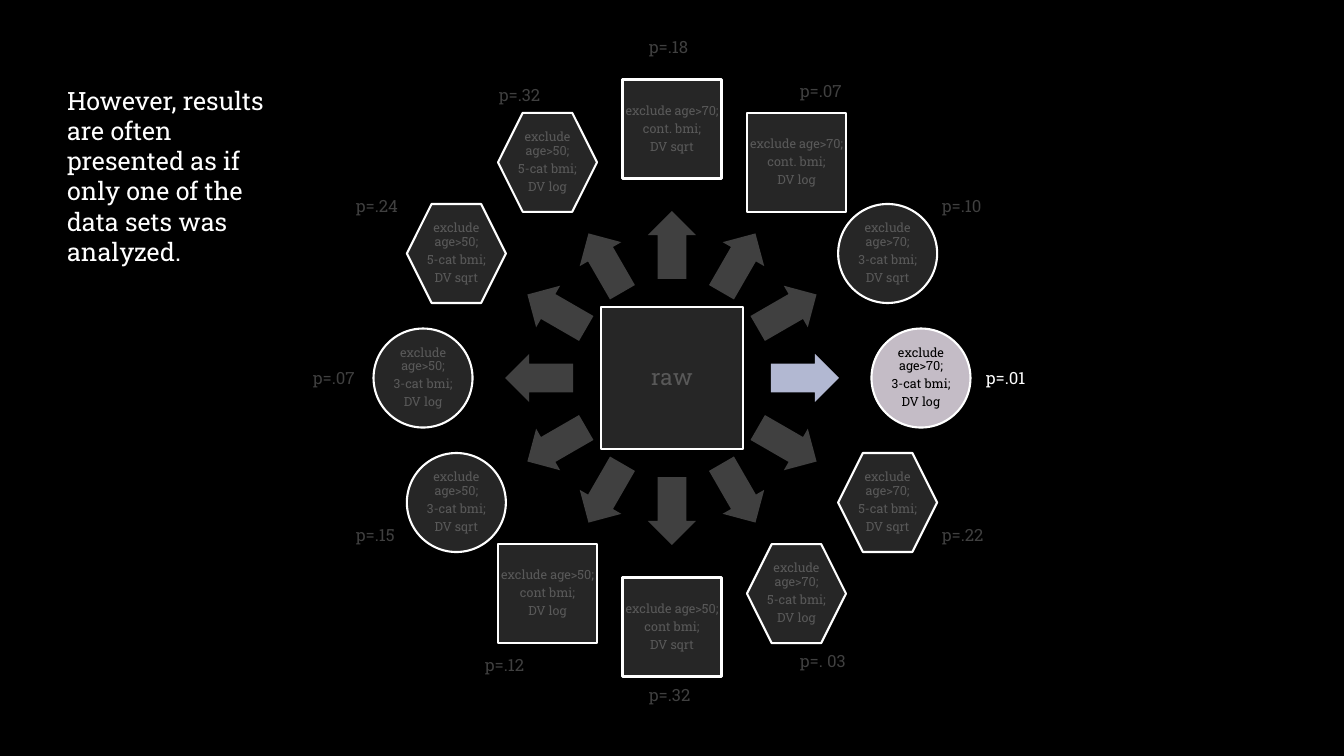
from itertools import product
from math import cos, radians, sin

from pptx import Presentation
from pptx.dml.color import RGBColor
from pptx.enum.shapes import MSO_SHAPE
from pptx.enum.text import MSO_ANCHOR, MSO_AUTO_SIZE, PP_ALIGN
from pptx.util import Emu, Pt

MESSAGE = "However, results are often presented as if only one of the data sets was analyzed."
AGES = [("exclude age>70;", "cont. bmi;"), ("exclude age>50;", "cont bmi;")]
BMI_SHAPES = [MSO_SHAPE.RECTANGLE, MSO_SHAPE.OVAL, MSO_SHAPE.HEXAGON]
BMI_CATEGORIES = [None, "3-cat bmi;", "5-cat bmi;"]
OUTCOMES = ["DV sqrt", "DV log"]
P_VALUES = [
    ("p=.18", 639, 32), ("p=.07", 790, 76), ("p=.10", 932, 191),
    ("p=.01", 976, 363), ("p=.22", 932, 520), ("p=. 03", 790, 646),
    ("p=.32", 639, 680), ("p=.12", 475, 650), ("p=.15", 346, 520),
    ("p=.07", 303, 363), ("p=.24", 346, 191), ("p=.32", 489, 80),
]
REPORTED = 3

COLORS = {
    "background": "000000", "white": "FFFFFF", "node": "262626",
    "node_text": "595959", "muted": "404040", "reported_arrow": "B2B8D2",
    "reported_node": "C4BCC6", "reported_text": "000000",
}
FONT = "Roboto Slab"
SCALE = 914400 / 100.8
CENTER_X, CENTER_Y = 672, 378
HUB_SIZE, NODE_SIZE = 142, 99
NODE_RADIUS, ARROW_RADIUS = 249, 133
ARROW_W, ARROW_H = 68, 48


def px(value):
    return Emu(round(value * SCALE))


def rgb(name):
    return RGBColor.from_string(COLORS[name])


def format_text(tf, size, color, align):
    for p in tf.paragraphs:
        p.alignment = align
        for r in p.runs:
            r.font.name = FONT
            r.font.size = Pt(size)
            r.font.color.rgb = rgb(color)


def add_filled(slide, kind, x, y, w, h, fill):
    s = slide.shapes.add_shape(kind, px(x - w / 2), px(y - h / 2), px(w), px(h))
    s.shadow.inherit = False
    s.fill.solid()
    s.fill.fore_color.rgb = rgb(fill)
    s.line.fill.background()
    return s


def add_node(slide, kind, x, y, size, fill, text, text_size, color):
    s = add_filled(slide, kind, x, y, size, size, fill)
    s.line.color.rgb = rgb("white")
    s.line.width = Pt(1.5)
    tf = s.text_frame
    tf.text = text
    tf.word_wrap = True
    tf.vertical_anchor = MSO_ANCHOR.MIDDLE
    tf.margin_left = tf.margin_right = tf.margin_top = tf.margin_bottom = px(1)
    format_text(tf, text_size, color, PP_ALIGN.CENTER)
    for p in tf.paragraphs:
        p.line_spacing = 0.9
        p.space_after = Pt(text_size * 0.35)


def add_arrow(slide, angle, fill):
    x = CENTER_X + ARROW_RADIUS * cos(radians(angle))
    y = CENTER_Y + ARROW_RADIUS * sin(radians(angle))
    s = add_filled(slide, MSO_SHAPE.RIGHT_ARROW, x, y, ARROW_W, ARROW_H, fill)
    s.adjustments[0] = 0.6
    s.adjustments[1] = 0.5
    s.rotation = angle


def add_p_value(slide, text, x, y, color):
    tf = slide.shapes.add_textbox(px(x), px(y), px(66), px(30)).text_frame
    tf.text = text
    tf.word_wrap = False
    format_text(tf, 12, color, PP_ALIGN.LEFT)


def add_message(slide):
    s = slide.shapes.title
    s.left, s.top, s.width, s.height = px(57), px(80), px(246), px(194)
    tf = s.text_frame
    tf.text = MESSAGE
    tf.word_wrap = True
    tf.auto_size = MSO_AUTO_SIZE.NONE
    tf.vertical_anchor = MSO_ANCHOR.TOP
    format_text(tf, 18, "white", PP_ALIGN.LEFT)


def main():
    prs = Presentation()
    prs.slide_width, prs.slide_height = px(1344), px(756)
    slide = prs.slides.add_slide(prs.slide_layouts[5])
    slide.background.fill.solid()
    slide.background.fill.fore_color.rgb = rgb("background")

    add_message(slide)
    add_node(slide, MSO_SHAPE.RECTANGLE, CENTER_X, CENTER_Y, HUB_SIZE,
             "node", "raw", 16, "node_text")

    analyses = product(AGES, zip(BMI_SHAPES, BMI_CATEGORIES), OUTCOMES)
    for i, ((age, continuous), (kind, category), outcome) in enumerate(analyses):
        reported = i == REPORTED
        angle = (270 + 30 * i) % 360
        add_arrow(slide, angle, "reported_arrow" if reported else "muted")
        add_node(slide, kind,
                 CENTER_X + NODE_RADIUS * cos(radians(angle)),
                 CENTER_Y + NODE_RADIUS * sin(radians(angle)), NODE_SIZE,
                 "reported_node" if reported else "node",
                 "\n".join([age, category or continuous, outcome]), 9,
                 "reported_text" if reported else "node_text")

    for i, (text, x, y) in enumerate(P_VALUES):
        add_p_value(slide, text, x, y, "white" if i == REPORTED else "muted")

    prs.save("out.pptx")


if __name__ == "__main__":
    main()
